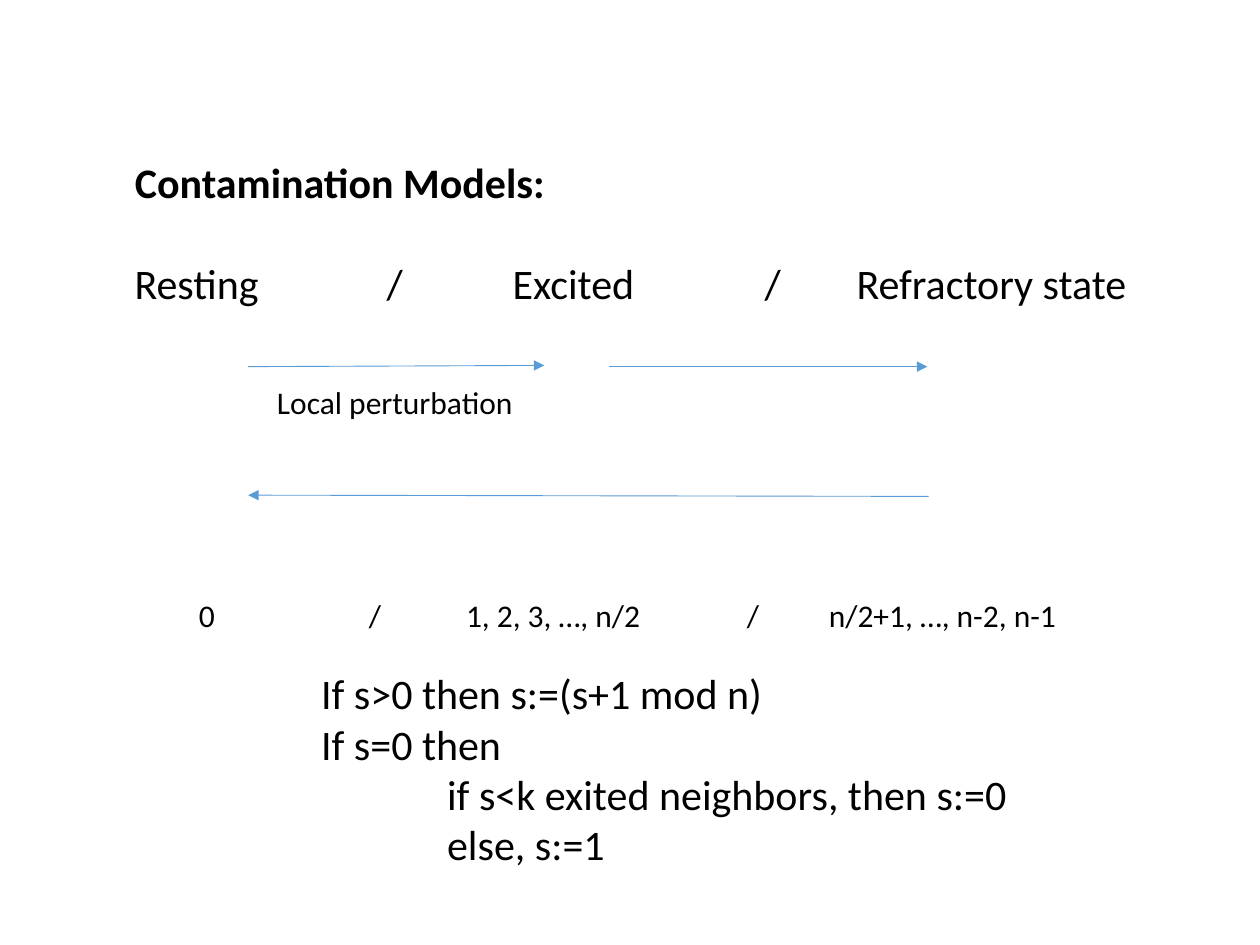
from pptx import Presentation, util as u
from pptx.dml.color import RGBColor
from pptx.enum import shapes, text
from pptx.oxml import ns, xmlchemy

BLACK = RGBColor(0x00, 0x00, 0x00)
BLUE = RGBColor(0x5B, 0x9B, 0xD5)
FONT = "Calibri"
COLUMNS, ROWS = 100, 75
WIDTH, HEIGHT = u.Inches(10), u.Inches(7.5)


def col(count):
    """Turn grid columns into a length."""
    return u.Emu(round(WIDTH * count / COLUMNS))


def row(count):
    """Turn grid rows into a length."""
    return u.Emu(round(HEIGHT * count / ROWS))


def place(area, left, top, width, height):
    """Set an area's place and size in grid units."""
    area.left, area.top = col(left), row(top)
    area.width, area.height = col(width), row(height)


def write(area, *lines, size=24, bold=False, tabs=(), indents=()):
    """Write one paragraph per line, with tab stops and left indents in columns."""
    frame = area.text_frame
    frame.word_wrap = True
    frame.auto_size = text.MSO_AUTO_SIZE.NONE
    frame.vertical_anchor = text.MSO_ANCHOR.TOP
    frame.text = "\n".join(lines)
    for index, paragraph in enumerate(frame.paragraphs):
        paragraph.alignment = text.PP_ALIGN.LEFT
        font = paragraph.runs[0].font
        font.name, font.size, font.bold = FONT, u.Pt(size), bold
        font.color.rgb = BLACK
        properties = paragraph._p.get_or_add_pPr()
        if indents:
            properties.set("marL", str(col(indents[index])))
        if tabs:
            stops = xmlchemy.OxmlElement("a:tabLst")
            for position in tabs:
                stop = xmlchemy.OxmlElement("a:tab")
                stop.set("pos", str(col(position)))
                stop.set("algn", "l")
                stops.append(stop)
            properties.append(stops)


def add_text(slide, box, *lines, **style):
    """Add a text box at the given grid box."""
    area = slide.shapes.add_textbox(0, 0, 0, 0)
    place(area, *box)
    write(area, *lines, **style)


def add_arrow(slide, start, end):
    """Add a thin arrow between two grid points."""
    arrow = slide.shapes.add_connector(
        shapes.MSO_CONNECTOR.STRAIGHT,
        col(start[0]), row(start[1]), col(end[0]), row(end[1]))
    arrow.line.color.rgb = BLUE
    arrow.line.width = u.Pt(0.5)
    head = xmlchemy.OxmlElement("a:tailEnd")
    head.set("type", "triangle")
    arrow._element.spPr.find(ns.qn("a:ln")).append(head)
    arrow._element.spPr.append(xmlchemy.OxmlElement("a:effectLst"))


def main():
    """Build the contamination models slide."""
    deck = Presentation()
    deck.slide_width, deck.slide_height = WIDTH, HEIGHT
    slide = deck.slides.add_slide(deck.slide_layouts[5])

    title = slide.shapes.title
    place(title, 9.7, 11.9, 82.3, 5)
    write(title, "Contamination Models:", bold=True)

    add_text(slide, (9.7, 19.95, 82.3, 5),
             "Resting\t/\tExcited\t/\tRefractory state",
             tabs=(20, 30, 50, 57.3))
    add_arrow(slide, (19.7, 29.1), (43.2, 29))
    add_text(slide, (21, 29.9, 21, 4), "Local perturbation", size=18)
    add_arrow(slide, (48.3, 29.1), (73.6, 29.1))
    add_arrow(slide, (73.7, 39.4), (19.7, 39.3))
    add_text(slide, (14.8, 46.8, 70.9, 4),
             "0\t/\t1, 2, 3, …, n/2\t/\tn/2+1, …, n-2, n-1",
             size=18, tabs=(13.5, 21.2, 43.5, 50))
    add_text(slide, (24.5, 52.5, 56.9, 17.2),
             "If s>0 then s:=(s+1 mod n)",
             "If s=0 then",
             "if s<k exited neighbors, then s:=0",
             "else, s:=1",
             indents=(0, 0, 10, 10))
    deck.save("out.pptx")


if __name__ == "__main__":
    main()
